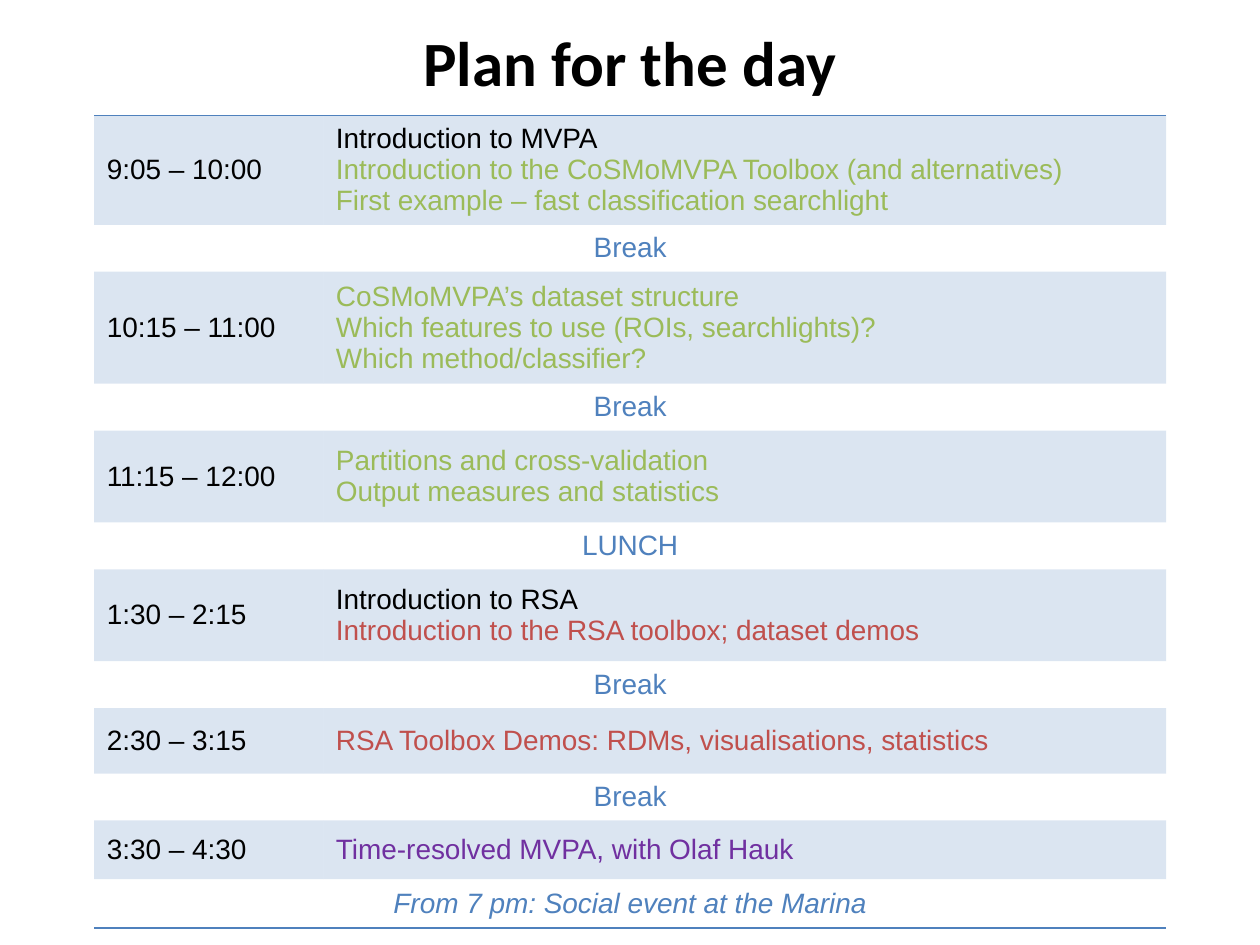
import pptx
import pptx.util
import pptx.dml.color
import pptx.enum.text
import pptx.oxml
import pptx.oxml.ns
from lxml import etree

Pt = pptx.util.Pt
RGBColor = pptx.dml.color.RGBColor
ALIGN = pptx.enum.text.PP_ALIGN
MIDDLE = pptx.enum.text.MSO_ANCHOR.MIDDLE
qn = pptx.oxml.ns.qn

BLACK = RGBColor(0x00, 0x00, 0x00)
BLUE = RGBColor(0x4F, 0x81, 0xBD)
GREEN = RGBColor(0x9B, 0xBB, 0x59)
RED = RGBColor(0xC0, 0x50, 0x4D)
PURPLE = RGBColor(0x70, 0x30, 0xA0)

PLAIN_STYLE = "{2D5ABB26-0587-4C30-8999-92F81FD0307C}"
COLUMN_WIDTHS = (131, 481.6)
BREAK_HEIGHT = 26.8
CLOSING_HEIGHT = 28

# Session: height, time, topics with colours, and what follows it
SESSIONS = [
    (62.5, "9:05 – 10:00", [
        ("Introduction to MVPA", BLACK),
        ("Introduction to the CoSMoMVPA Toolbox (and alternatives)", GREEN),
        ("First example – fast classification searchlight", GREEN)], "Break"),
    (64, "10:15 – 11:00", [
        ("CoSMoMVPA’s dataset structure", GREEN),
        ("Which features to use (ROIs, searchlights)?", GREEN),
        ("Which method/classifier?", GREEN)], "Break"),
    (52.5, "11:15 – 12:00", [
        ("Partitions and cross-validation", GREEN),
        ("Output measures and statistics", GREEN)], "LUNCH"),
    (52.5, "1:30 – 2:15", [
        ("Introduction to RSA", BLACK),
        ("Introduction to the RSA toolbox; dataset demos", RED)], "Break"),
    (37.5, "2:30 – 3:15", [
        ("RSA Toolbox Demos: RDMs, visualisations, statistics", RED)], "Break"),
    (33.5, "3:30 – 4:30", [
        ("Time-resolved MVPA, with Olaf Hauk", PURPLE)],
     "From 7 pm: Social event at the Marina"),
]


def write_cell(cell, lines, align=ALIGN.LEFT, italic=False):
    cell.vertical_anchor = MIDDLE
    cell.margin_left = cell.margin_right = Pt(7.2)
    cell.margin_top = cell.margin_bottom = 0
    cell.text_frame.text = "\n".join(text for text, _ in lines)
    for para, (_, color) in zip(cell.text_frame.paragraphs, lines):
        para.alignment = align
        for span in para.runs:
            span.font.name = "Arial"
            span.font.size = Pt(16)
            span.font.italic = italic
            span.font.color.rgb = color


def tint_cell(cell):
    """Fill the cell with blue at 20 % opacity."""
    cell.fill.solid()
    cell.fill.fore_color.rgb = BLUE
    color = cell.fill._xPr.find(".//" + qn("a:srgbClr"))
    etree.SubElement(color, qn("a:alpha"), val="20000")


def rule_row(row, side):
    """Draw a 1 pt blue line along the top (lnT) or bottom (lnB) of a row."""
    for cell in row.cells:
        properties = cell._tc.get_or_add_tcPr()
        line = etree.Element(qn("a:" + side), w=str(Pt(1)))
        fill = etree.SubElement(line, qn("a:solidFill"))
        etree.SubElement(fill, qn("a:srgbClr"), val=str(BLUE))
        properties.insert(0, line)


def add_title(page, left, top, width, height):
    title = page.shapes.title
    title.left, title.top = Pt(left), Pt(top)
    title.width, title.height = Pt(width), Pt(height)
    frame = title.text_frame
    frame.text = "Plan for the day"
    frame.auto_size = pptx.enum.text.MSO_AUTO_SIZE.NONE
    frame.vertical_anchor = MIDDLE
    para = frame.paragraphs[0]
    para.alignment = ALIGN.CENTER
    font = para.runs[0].font
    font.name, font.size, font.bold = "Calibri", Pt(36), True
    font.color.rgb = BLACK


def add_schedule(page, left, top, width, height):
    box = page.shapes.add_table(2 * len(SESSIONS), 2, Pt(left), Pt(top),
                                Pt(width), Pt(height))
    box.element.find(".//" + qn("a:tableStyleId")).text = PLAIN_STYLE
    table = box.table
    table.first_row = table.horz_banding = False
    for column, column_width in zip(table.columns, COLUMN_WIDTHS):
        column.width = Pt(column_width)

    for index, (row_height, time, topics, interval) in enumerate(SESSIONS):
        closing = index == len(SESSIONS) - 1
        session = table.rows[2 * index]
        session.height = Pt(row_height)
        for cell, lines in zip(session.cells, ([(time, BLACK)], topics)):
            write_cell(cell, lines)
            tint_cell(cell)

        pause = table.rows[2 * index + 1]
        pause.height = Pt(CLOSING_HEIGHT if closing else BREAK_HEIGHT)
        first, last = pause.cells
        first.merge(last)
        write_cell(first, [(interval, BLUE)], ALIGN.CENTER, italic=closing)
        for cell in (first, last):
            cell.fill.background()

    rule_row(table.rows[0], "lnT")
    rule_row(table.rows[len(table.rows) - 1], "lnB")


def main():
    deck = pptx.Presentation()
    deck.slide_width, deck.slide_height = Pt(720), Pt(540)
    page = deck.slides.add_slide(deck.slide_layouts[5])
    add_title(page, 36, 21.6, 648, 27.4)
    add_schedule(page, 53.8, 66, sum(COLUMN_WIDTHS), 464.5)
    deck.save("out.pptx")


if __name__ == "__main__":
    main()
